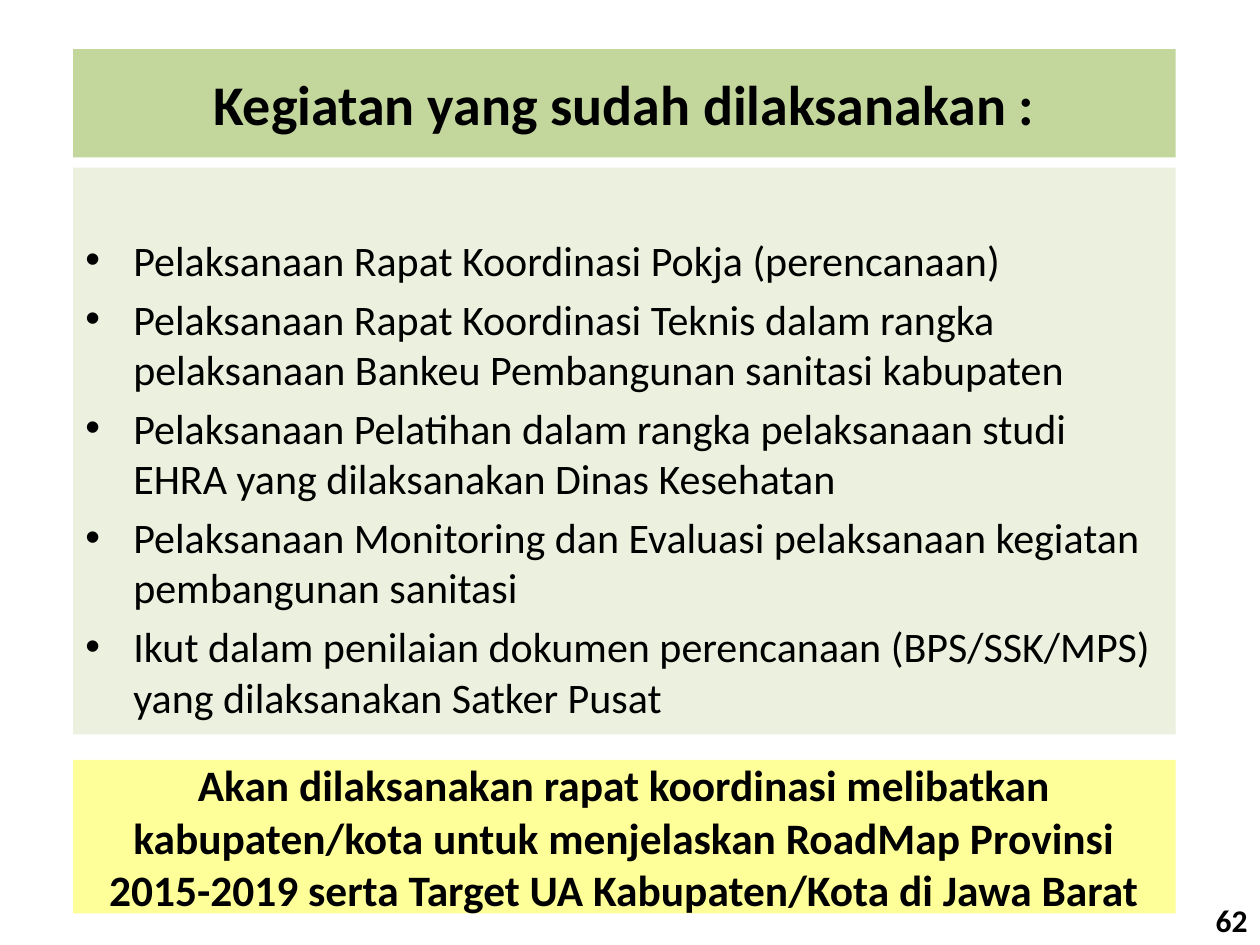
from dataclasses import dataclass

from lxml.etree import SubElement
from pptx import Presentation
from pptx.dml.color import RGBColor as Rgb
from pptx.enum.shapes import MSO_SHAPE as Kind
from pptx.enum.text import MSO_ANCHOR as Anchor, PP_ALIGN as Align
from pptx.oxml.ns import qn
from pptx.util import Inches, Pt


@dataclass(frozen=True)
class Theme:
    font: str = "Calibri"
    ink: str = "000000"
    green: str = "C3D69B"
    pale: str = "EBF1DE"
    yellow: str = "FFFF99"
    title: float = 32
    body: float = 24
    note: float = 24.8
    page: float = 18
    gap: float = 4.8


class Deck:
    def __init__(self, theme):
        self.theme = theme
        self.prs = Presentation()
        self.prs.slide_width = Inches(10)
        self.prs.slide_height = Inches(7.5)
        self.slide = self.prs.slides.add_slide(self.prs.slide_layouts[6])

    def style(self, para, size, bold, align):
        para.alignment = align
        for run in para.runs:
            font = run.font
            font.name = self.theme.font
            font.size = Pt(size)
            font.bold = bold
            font.color.rgb = Rgb.from_string(self.theme.ink)

    def panel(self, top, high, fill):
        box = self.slide.shapes.add_shape(
            Kind.RECTANGLE, Inches(0.58), Inches(top), Inches(8.75), Inches(high))
        box.shadow.inherit = False
        box.fill.solid()
        box.fill.fore_color.rgb = Rgb.from_string(fill)
        box.line.fill.background()
        box.text_frame.word_wrap = True
        return box.text_frame

    def banner(self, top, high, fill, text, size):
        frame = self.panel(top, high, fill)
        frame.vertical_anchor = Anchor.MIDDLE
        frame.text = text
        self.style(frame.paragraphs[0], size, True, Align.CENTER)

    def bullets(self, top, high, fill, items, inset):
        frame = self.panel(top, high, fill)
        frame.vertical_anchor = Anchor.TOP
        frame.margin_top = Inches(inset)
        for i, item in enumerate(items):
            para = frame.add_paragraph() if i else frame.paragraphs[0]
            para.text = item
            if i:
                para.space_before = Pt(self.theme.gap)
            props = para._p.get_or_add_pPr()
            props.set("marL", str(Inches(0.38)))
            props.set("indent", str(-Inches(0.38)))
            SubElement(props, qn("a:buFont"), typeface="Arial")
            SubElement(props, qn("a:buChar"), char="•")
            self.style(para, self.theme.body, False, Align.LEFT)

    def number(self, text):
        box = self.slide.shapes.add_textbox(
            Inches(9.25), Inches(7.1), Inches(0.75), Inches(0.4))
        frame = box.text_frame
        frame.word_wrap = True
        frame.text = text
        self.style(frame.paragraphs[0], self.theme.page, True, Align.RIGHT)


def main():
    theme = Theme()
    deck = Deck(theme)
    deck.banner(0.39, 0.86, theme.green,
                "Kegiatan yang sudah dilaksanakan :", theme.title)
    deck.bullets(1.33, 4.5, theme.pale, [
        "Pelaksanaan Rapat Koordinasi Pokja (perencanaan)",
        "Pelaksanaan Rapat Koordinasi Teknis dalam rangka "
        "pelaksanaan Bankeu Pembangunan sanitasi kabupaten",
        "Pelaksanaan Pelatihan dalam rangka pelaksanaan studi "
        "EHRA yang dilaksanakan Dinas Kesehatan",
        "Pelaksanaan Monitoring dan Evaluasi pelaksanaan kegiatan "
        "pembangunan sanitasi",
        "Ikut dalam penilaian dokumen perencanaan (BPS/SSK/MPS) "
        "yang dilaksanakan Satker Pusat",
    ], inset=0.53)
    deck.banner(6.03, 1.22, theme.yellow,
                "Akan dilaksanakan rapat koordinasi melibatkan "
                "kabupaten/kota untuk menjelaskan RoadMap Provinsi "
                "2015-2019 serta Target UA Kabupaten/Kota di Jawa Barat",
                theme.note)
    deck.number("62")
    deck.prs.save("out.pptx")


if __name__ == "__main__":
    main()
